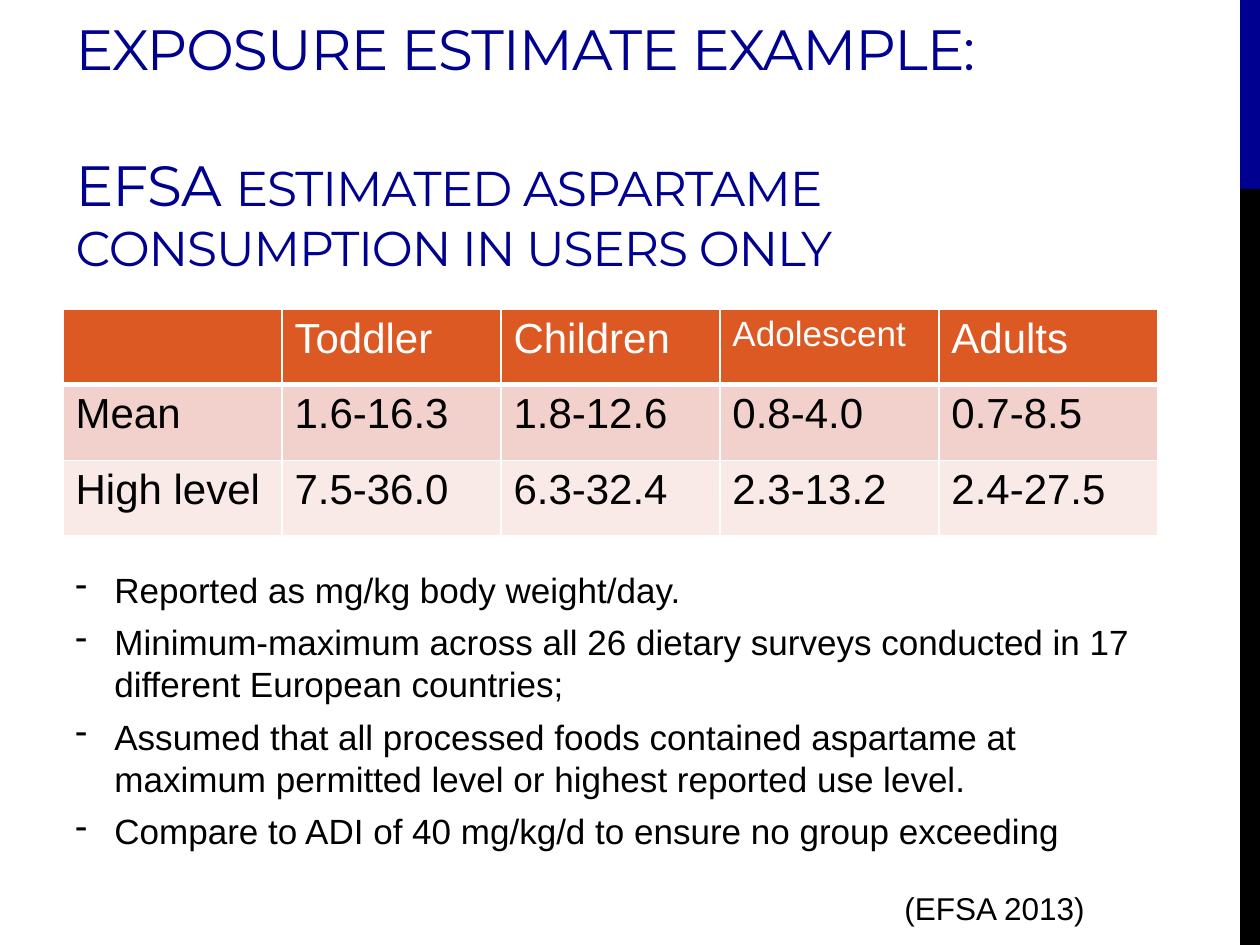
import pptx
import pptx.dml.color
import pptx.enum.shapes
import pptx.enum.text
import pptx.oxml
import pptx.oxml.ns
import pptx.util

PX_PER_INCH = 126
COLOURS = {
    "navy": "000090",
    "black": "000000",
    "white": "FFFFFF",
    "orange": "DC5924",
    "rose": "F2D1CD",
    "blush": "F9EAE8",
}
EXPOSURES = [
    ["", "Toddler", "Children", "Adolescent", "Adults"],
    ["Mean", "1.6-16.3", "1.8-12.6", "0.8-4.0", "0.7-8.5"],
    ["High level", "7.5-36.0", "6.3-32.4", "2.3-13.2", "2.4-27.5"],
]
NOTES = [
    "Reported as mg/kg body weight/day.",
    "Minimum-maximum across all 26 dietary surveys conducted in 17 different European countries;",
    "Assumed that all processed foods contained aspartame at maximum permitted level or highest reported use level.",
    "Compare to ADI of 40 mg/kg/d to ensure no group exceeding",
]


def px(length):
    """Turn pixels into EMU."""
    return pptx.util.Emu(round(length * 914400 / PX_PER_INCH))


def box(left, top, width, height):
    """Turn a pixel rectangle into EMU."""
    return [px(length) for length in (left, top, width, height)]


def rgb(name):
    """Look up a named colour."""
    return pptx.dml.color.RGBColor.from_string(COLOURS[name])


def add_run(paragraph, text, size, colour="black", font="Arial"):
    """Add one formatted run."""
    run = paragraph.add_run()
    run.text = text
    run.font.size = pptx.util.Pt(size)
    run.font.name = font
    run.font.bold = False
    run.font.color.rgb = rgb(colour)
    return run


def add_bar(slide, top, height, colour):
    """Add one part of the right-hand edge strip."""
    rectangle = pptx.enum.shapes.MSO_SHAPE.RECTANGLE
    shape = slide.shapes.add_shape(rectangle, *box(1240, top, 20, height))
    shape.shadow.inherit = False
    shape.fill.solid()
    shape.fill.fore_color.rgb = rgb(colour)
    shape.line.fill.background()


def format_title(slide):
    """Place and fill the title."""
    title = slide.shapes.title
    title.left, title.top, title.width, title.height = box(63, 94, 1027, 189)
    frame = title.text_frame
    frame.word_wrap = True
    frame.auto_size = pptx.enum.text.MSO_AUTO_SIZE.NONE
    frame.vertical_anchor = pptx.enum.text.MSO_ANCHOR.BOTTOM
    heading, subject = frame.paragraphs[0], frame.add_paragraph()
    for paragraph in (heading, subject):
        paragraph.alignment = pptx.enum.text.PP_ALIGN.LEFT
        paragraph.line_spacing = 1.0
        paragraph.space_before = pptx.util.Pt(0)
    subject.space_before = pptx.util.Pt(39)
    for paragraph, text, size in (
        (heading, "EXPOSURE ESTIMATE EXAMPLE:", 32.4),
        (subject, "EFSA ", 32.4),
        (subject, "ESTIMATED ASPARTAME CONSUMPTION IN USERS ONLY", 27.9),
    ):
        run = add_run(paragraph, text, size, "navy", "Montserrat")
        run.font._element.set("spc", "-60")


def set_borders(cell, bottom_width):
    """Draw white borders around a cell."""
    properties = cell._tc.get_or_add_tcPr()
    widths = {"lnL": 1, "lnR": 1, "lnT": 1, "lnB": bottom_width}
    for position, (tag, width) in enumerate(widths.items()):
        line = pptx.oxml.parse_xml(
            f'<a:{tag} {pptx.oxml.ns.nsdecls("a")} w="{pptx.util.Pt(width)}">'
            f'<a:solidFill><a:srgbClr val="{COLOURS["white"]}"/></a:solidFill></a:{tag}>'
        )
        properties.insert(position, line)


def add_exposure_table(slide):
    """Add the table of exposures by age group."""
    rows, columns = len(EXPOSURES), len(EXPOSURES[0])
    frame = slide.shapes.add_table(rows, columns, *box(63, 309, 1095, 227))
    fills = ["orange", "rose", "blush"]
    for row, values in enumerate(EXPOSURES):
        for column, text in enumerate(values):
            cell = frame.table.cell(row, column)
            cell.fill.solid()
            cell.fill.fore_color.rgb = rgb(fills[row])
            set_borders(cell, 1 if row else 3)
            if text:
                size = 20 if text == "Adolescent" else 24
                colour = "black" if row else "white"
                add_run(cell.text_frame.paragraphs[0], text, size, colour)


def add_text(slide, bounds, texts, size, wrap=True, bullet=None):
    """Add a text box, with hanging bullets if a bullet is given."""
    frame = slide.shapes.add_textbox(*box(*bounds)).text_frame
    frame.word_wrap = wrap
    frame.auto_size = pptx.enum.text.MSO_AUTO_SIZE.SHAPE_TO_FIT_TEXT
    for index, text in enumerate(texts):
        paragraph = frame.add_paragraph() if index else frame.paragraphs[0]
        add_run(paragraph, text, size)
        if bullet:
            paragraph.space_after = pptx.util.Pt(6)
            properties = paragraph._p.get_or_add_pPr()
            properties.set("marL", str(px(39)))
            properties.set("indent", str(px(-39)))
            properties.append(pptx.oxml.parse_xml(
                f'<a:buChar {pptx.oxml.ns.nsdecls("a")} char="{bullet}"/>'
            ))


def main():
    """Build and save the slide."""
    presentation = pptx.Presentation()
    presentation.slide_width, presentation.slide_height = px(1260), px(945)
    slide = presentation.slides.add_slide(presentation.slide_layouts[5])
    add_bar(slide, 0, 189, "navy")
    add_bar(slide, 189, 756, "black")
    format_title(slide)
    add_exposure_table(slide)
    add_text(slide, (63, 562, 1081, 386), NOTES, 20, bullet="-")
    add_text(slide, (892, 883, 208, 50), ["(EFSA 2013)"], 18, wrap=False)
    presentation.save("out.pptx")


if __name__ == "__main__":
    main()
